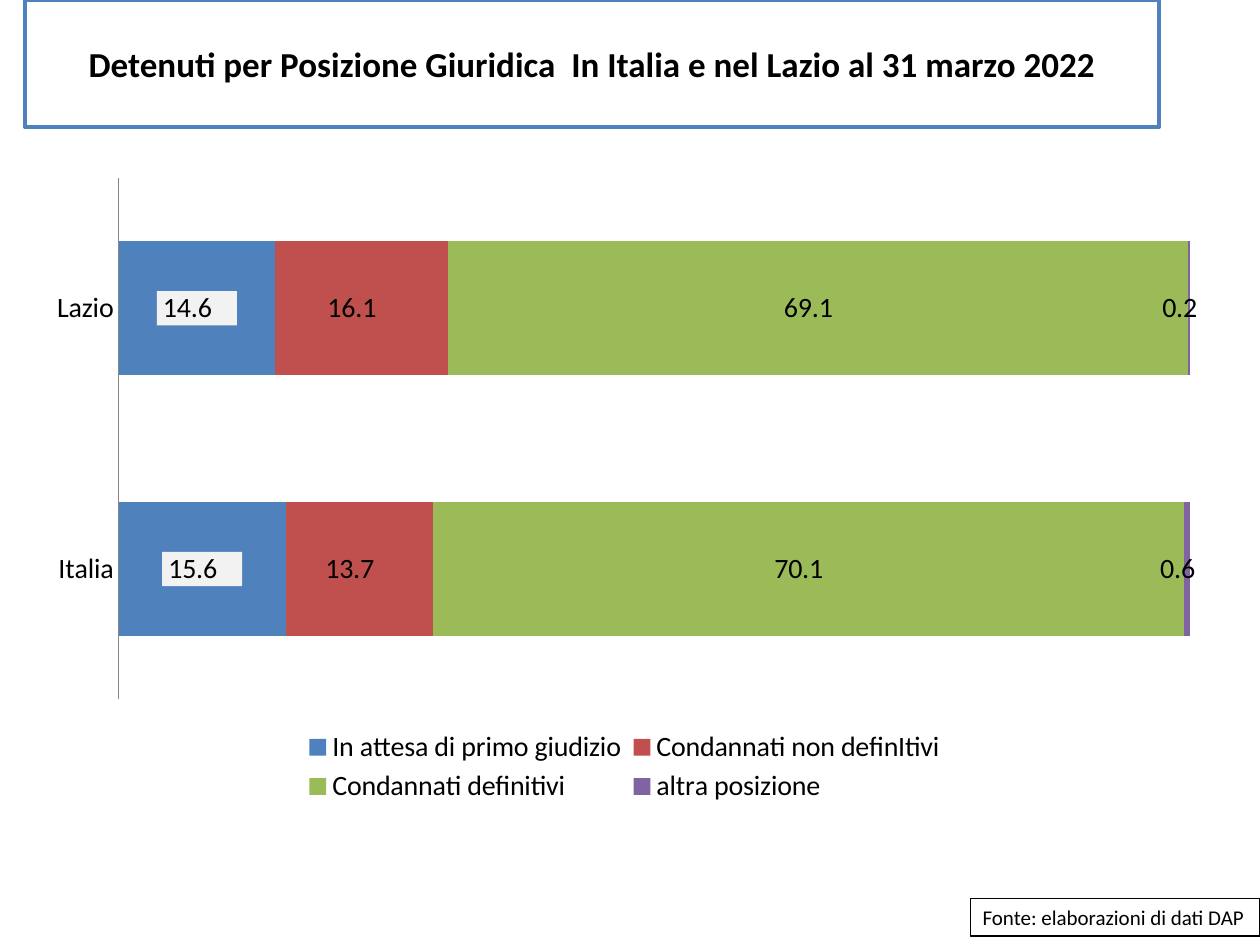
from lxml import etree
from pptx import Presentation
from pptx.chart.data import CategoryChartData
from pptx.dml.color import RGBColor
from pptx.enum.chart import (XL_CHART_TYPE as ChartType, XL_LEGEND_POSITION as LegendPosition,
                             XL_TICK_LABEL_POSITION as LabelPosition, XL_TICK_MARK as TickMark)
from pptx.enum.text import MSO_ANCHOR as Anchor, MSO_AUTO_SIZE as AutoSize, PP_ALIGN as Align
from pptx.oxml.ns import qn
from pptx.util import Inches, Pt

BLACK = RGBColor(0x00, 0x00, 0x00)
WHITE = RGBColor(0xFF, 0xFF, 0xFF)
BLUE = RGBColor(0x4F, 0x81, 0xBD)
RED = RGBColor(0xC0, 0x50, 0x4D)
GREEN = RGBColor(0x9B, 0xBB, 0x59)
PURPLE = RGBColor(0x80, 0x64, 0xA2)
PALE_GREY = RGBColor(0xF2, 0xF2, 0xF2)
AXIS_GREY = RGBColor(0x86, 0x86, 0x86)

FONT = "Calibri"
NUMBER_FORMAT = r"_-* #,##0.0\ _€_-;\-* #,##0.0\ _€_-;_-* "
REGIONS = ["Lazio", "Italia"]
POSITIONS = [
    ("In attesa di primo giudizio", [14.6, 15.6], BLUE),
    ("Condannati non definItivi", [16.1, 13.7], RED),
    ("Condannati definitivi", [69.1, 70.1], GREEN),
    ("altra posizione", [0.2, 0.6], PURPLE),
]


def apply_format(target, values):
    for name, value in values.items():
        setattr(target, name, value)


def style_font(font, size, bold=False):
    apply_format(font, {"name": FONT, "size": Pt(size), "bold": bold})
    font.color.rgb = BLACK


def place(shape, box):
    apply_format(shape, dict(zip(("left", "top", "width", "height"), map(Inches, box))))


def style_box(shape, line_color, line_width):
    shape.fill.solid()
    shape.fill.fore_color.rgb = WHITE
    shape.line.color.rgb = line_color
    shape.line.width = Pt(line_width)


def set_layout(parent, position, **fractions):
    """Fix a chart part's place, in fractions of the chart's size."""
    for old in parent.findall(qn("c:layout")):
        parent.remove(old)
    layout = etree.Element(qn("c:layout"))
    manual = etree.SubElement(layout, qn("c:manualLayout"))
    if parent.tag == qn("c:plotArea"):
        etree.SubElement(manual, qn("c:layoutTarget")).set("val", "inner")
    for mode in ("xMode", "yMode"):
        etree.SubElement(manual, qn("c:" + mode)).set("val", "edge")
    for name, value in fractions.items():
        etree.SubElement(manual, qn("c:" + name)).set("val", str(value))
    parent.insert(position, layout)


def add_title(slide, box):
    title = slide.shapes.title
    place(title, box)
    style_box(title, BLUE, 2)
    frame = title.text_frame
    apply_format(frame, {"vertical_anchor": Anchor.MIDDLE, "word_wrap": True,
                         "auto_size": AutoSize.NONE})
    paragraph = frame.paragraphs[0]
    paragraph.alignment = Align.CENTER
    run = paragraph.add_run()
    run.text = "Detenuti per Posizione Giuridica  In Italia e nel Lazio al 31 marzo 2022"
    style_font(run.font, 20, bold=True)


def add_source(slide, box):
    source = slide.shapes.add_textbox(*map(Inches, box))
    style_box(source, BLACK, 0.75)
    frame = source.text_frame
    apply_format(frame, {"word_wrap": False, "auto_size": AutoSize.SHAPE_TO_FIT_TEXT})
    run = frame.paragraphs[0].add_run()
    run.text = "Fonte: elaborazioni di dati DAP"
    style_font(run.font, 12)


def add_positions_chart(slide, box):
    data = CategoryChartData(number_format="0.0")
    data.categories = REGIONS
    for name, values, _ in POSITIONS:
        data.add_series(name, values)
    chart = slide.shapes.add_chart(
        ChartType.BAR_STACKED_100, *map(Inches, box), data).chart
    chart.has_title = False
    style_font(chart.font, 16)

    # Bars and their labels
    plot = chart.plots[0]
    apply_format(plot, {"gap_width": 95, "overlap": 100, "vary_by_categories": False})
    for series, (_, _, color) in zip(plot.series, POSITIONS):
        series.format.fill.solid()
        series.format.fill.fore_color.rgb = color
        labels = series.data_labels
        apply_format(labels, {"show_value": True, "number_format": NUMBER_FORMAT,
                              "number_format_is_linked": False})
        style_font(labels.font, 16)

    # Pale background behind the first series' labels
    first_labels = plot.series[0].data_labels._element
    background = etree.Element(qn("c:spPr"))
    fill = etree.SubElement(background, qn("a:solidFill"))
    etree.SubElement(fill, qn("a:srgbClr")).set("val", str(PALE_GREY))
    first_labels.find(qn("c:numFmt")).addnext(background)

    # Axes
    category_axis, value_axis = chart.category_axis, chart.value_axis
    apply_format(category_axis, {"reverse_order": True, "major_tick_mark": TickMark.NONE,
                                 "minor_tick_mark": TickMark.NONE,
                                 "tick_label_position": LabelPosition.NEXT_TO_AXIS})
    category_axis.format.line.color.rgb = AXIS_GREY
    apply_format(value_axis, {"visible": False, "has_major_gridlines": False})
    apply_format(value_axis.tick_labels, {"number_format": NUMBER_FORMAT,
                                          "number_format_is_linked": False})

    # Legend in two rows
    chart.has_legend = True
    legend = chart.legend
    apply_format(legend, {"position": LegendPosition.BOTTOM, "include_in_layout": False})
    style_font(legend.font, 16)
    set_layout(legend._element, 1, x=0.22, y=0.87, w=0.55, h=0.13)
    set_layout(plot._element.getparent(), 0, x=0.07, y=0.02, w=0.9, h=0.81)


def main():
    presentation = Presentation()
    apply_format(presentation, {"slide_width": Inches(10), "slide_height": Inches(7.5)})
    slide = presentation.slides.add_slide(presentation.slide_layouts.get_by_name("Title Only"))
    add_title(slide, (0.2, 0, 9, 1.01))
    add_source(slide, (7.7, 7.13, 2.3, 0.3))
    add_positions_chart(slide, (0.28, 1.31, 9.45, 5.11))
    presentation.save("out.pptx")


if __name__ == "__main__":
    main()
